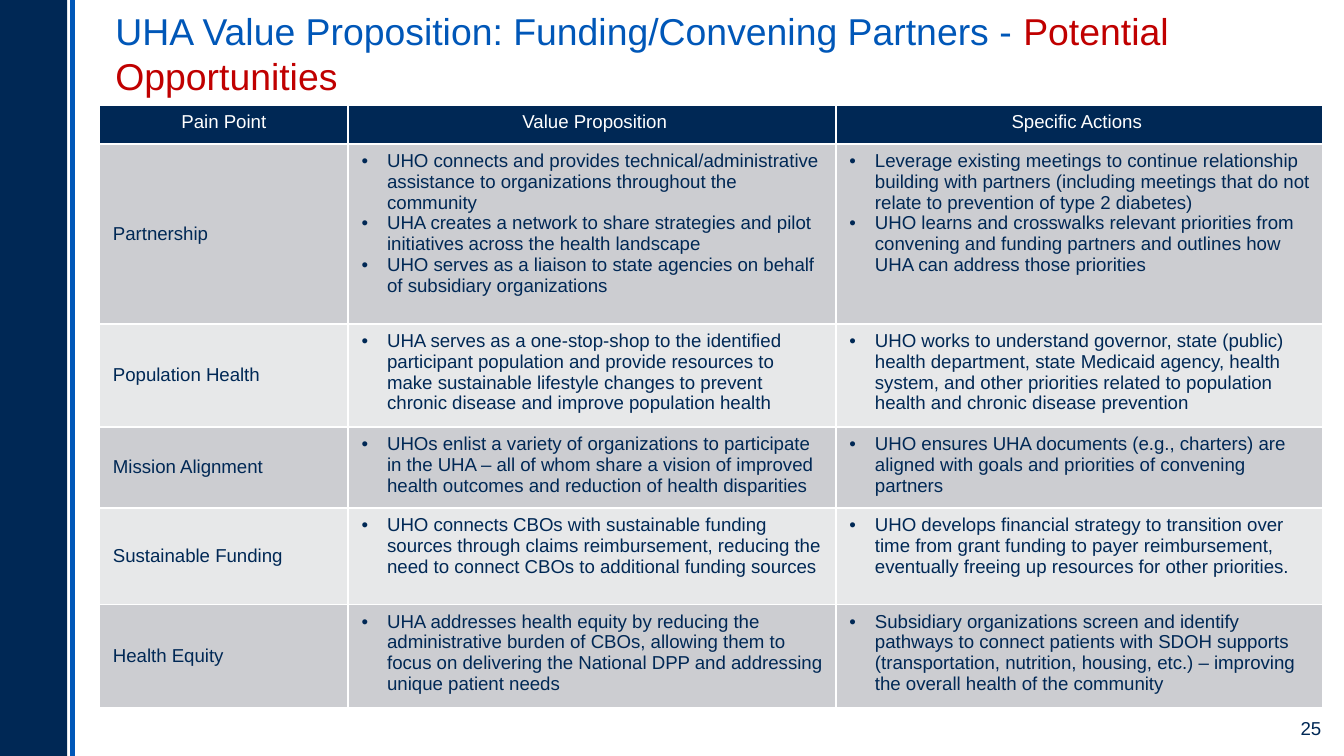
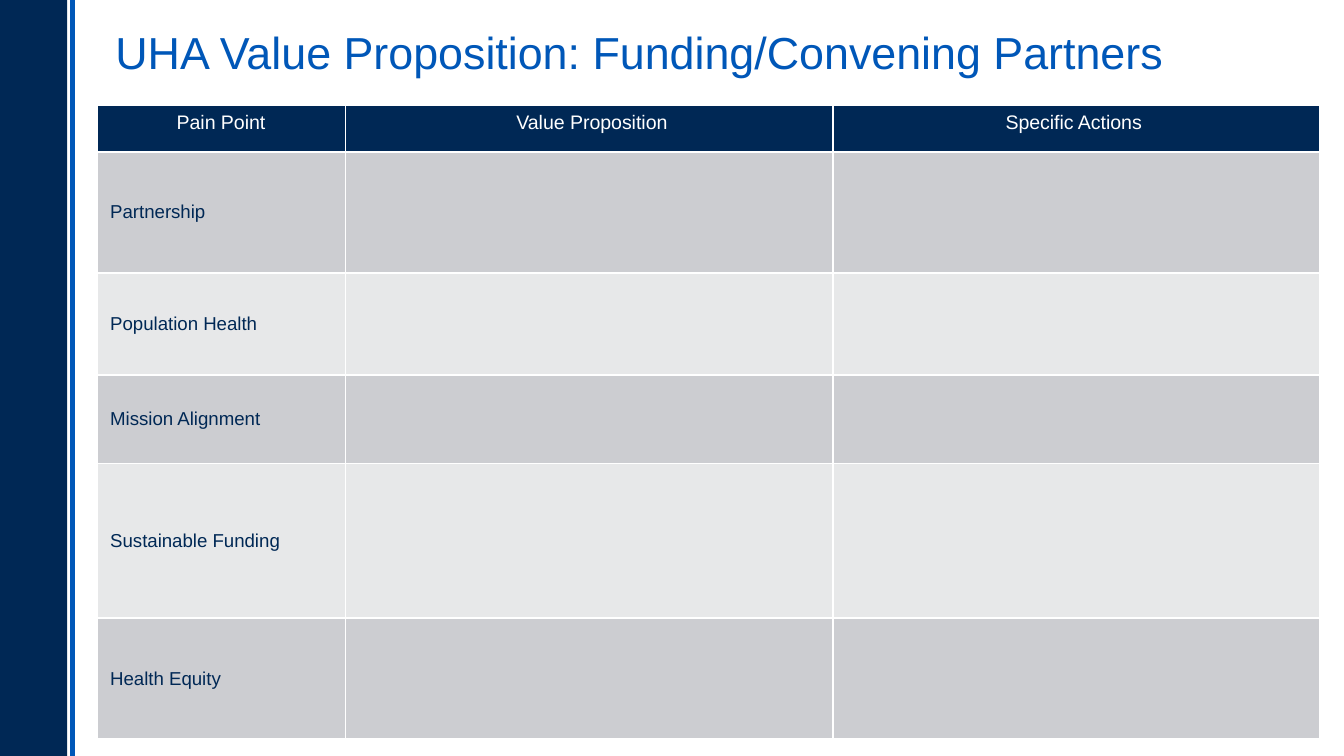
from lxml.etree import SubElement
from pptx import Presentation
from pptx.dml.color import RGBColor
from pptx.enum.shapes import MSO_CONNECTOR, MSO_SHAPE
from pptx.enum.text import MSO_ANCHOR, PP_ALIGN
from pptx.oxml import parse_xml
from pptx.oxml.ns import nsdecls, qn
from pptx.util import Inches, Pt

WIDE = Inches(10)
HIGH = WIDE * 9 // 16
NAVY, BLUE, RED, WHITE = "002855", "0057B8", "C00000", "FFFFFF"
BANDS = ["E7E8E9", "CCCDD1"]
COLS = [1.85, 3.63, 3.62]
TOP = 0.78
HEADS = ["Pain Point", " Value Proposition", "Specific Actions "]
PAINS = ["Partnership", "Population Health", "Mission Alignment",
         "Sustainable Funding", "Health Equity"]
TITLE = "UHA Value Proposition: Funding/Convening Partners"

VALUES = [
    ["UHO connects and provides technical/administrative assistance to "
     "organizations throughout the community",
     "UHA creates a network to share strategies and pilot initiatives across "
     "the health landscape",
     "UHO serves as a liaison to state agencies on behalf of subsidiary "
     "organizations"],
    ["UHA serves as a one-stop-shop to the identified participant population "
     "and provide resources to make sustainable lifestyle changes to prevent "
     "chronic disease and improve population health"],
    ["UHOs enlist a variety of organizations to participate in the UHA – all "
     "of whom share a vision of improved health outcomes and reduction of "
     "health disparities"],
    ["UHO connects CBOs with sustainable funding sources through claims "
     "reimbursement, reducing the need to connect CBOs to additional funding "
     "sources"],
    ["UHA addresses health equity by reducing the administrative burden of "
     "CBOs, allowing them to focus on delivering the National DPP and "
     "addressing unique patient needs"],
]
ACTIONS = [
    ["Leverage existing meetings to continue relationship building with "
     "partners (including meetings that do not relate to prevention of type 2 "
     "diabetes)",
     "UHO learns and crosswalks relevant priorities from convening and "
     "funding partners and outlines how UHA can address those priorities"],
    ["UHO works to understand governor, state (public) health department, "
     "state Medicaid agency, health system, and other priorities related to "
     "population health and chronic disease prevention"],
    ["UHO ensures UHA documents (e.g., charters) are aligned with goals and "
     "priorities of convening partners"],
    ["UHO develops financial strategy to transition over time from grant "
     "funding to payer reimbursement, eventually freeing up resources for "
     "other priorities."],
    ["Subsidiary organizations screen and identify pathways to connect "
     "patients with SDOH supports (transportation, nutrition, housing, etc.) "
     "– improving the overall health of the community"],
]
NONE = [[]] * len(PAINS)

SLIDES = [
    {"title": [(TITLE + " - ", BLUE), ("Potential Opportunities", RED)],
     "size": 20, "box": (9.24, 0.71), "left": 0.74, "head": 10, "page": "25",
     "rows": [0.29, 1.34, 0.64, 0.56, 0.72, 0.76], "tall": 4.63,
     "body": (VALUES, ACTIONS)},
    {"title": [(TITLE, BLUE)],
     "size": 24, "box": (9.08, 0.56), "left": 0.72, "head": 10.5, "page": "",
     "rows": [0.35, 0.9, 0.76, 0.66, 1.15, 0.9], "tall": 4.72,
     "body": (NONE, NONE)},
]


def ink(code):
    """Turn a hex string into a colour."""
    return RGBColor.from_string(code)


def write(frame, paras, size, align=PP_ALIGN.LEFT, bullet=False):
    """Fill a frame; each paragraph is a list of (text, colour) runs."""
    for n, runs in enumerate(paras):
        para = frame.add_paragraph() if n else frame.paragraphs[0]
        para.alignment = align
        if bullet:
            props = para._p.get_or_add_pPr()
            props.set("marL", str(Inches(0.19)))
            props.set("indent", str(-Inches(0.19)))
            SubElement(props, qn("a:buFont")).set("typeface", "Arial")
            SubElement(props, qn("a:buChar")).set("char", "•")
        for text, code in runs:
            run = para.add_run()
            run.text = text
            look = {"name": "Arial", "size": Pt(size), "bold": False}
            for key, val in look.items():
                setattr(run.font, key, val)
            run.font.color.rgb = ink(code)


deck = Presentation()
deck.slide_width, deck.slide_height = WIDE, HIGH

for plan in SLIDES:
    slide = deck.slides.add_slide(deck.slide_layouts[6])
    shapes = slide.shapes

    # Side band and stripe
    mid = Inches(0.54)
    stripe = shapes.add_connector(MSO_CONNECTOR.STRAIGHT, mid, HIGH, mid, 0)
    stripe.line.color.rgb = ink(BLUE)
    stripe.line.width = Pt(2.25)
    SubElement(stripe._element.spPr, qn("a:effectLst"))
    band = shapes.add_shape(MSO_SHAPE.RECTANGLE, 0, 0, Inches(0.5), HIGH)
    band.shadow.inherit = False
    band.fill.solid()
    band.fill.fore_color.rgb = ink(NAVY)
    band.line.fill.background()

    # Title and page number
    width, height = plan["box"]
    boxes = [
        ((0.76, 0.07, width, height), plan["title"], plan["size"],
         PP_ALIGN.LEFT, MSO_ANCHOR.BOTTOM),
        ((9, 5.27, 0.93, 0.3), [(plan["page"], NAVY)], 10,
         PP_ALIGN.RIGHT, MSO_ANCHOR.MIDDLE),
    ]
    for place, runs, size, align, anchor in boxes:
        if runs[0][0]:
            frame = shapes.add_textbox(*map(Inches, place)).text_frame
            frame.word_wrap = True
            frame.vertical_anchor = anchor
            write(frame, [runs], size, align)

    # Table
    rows = plan["rows"]
    place = (plan["left"], TOP, sum(COLS), plan["tall"])
    grid = shapes.add_table(len(rows), len(COLS), *map(Inches, place))
    table = grid.table
    for col, size in zip(table.columns, COLS):
        col.width = Inches(size)
    for row, size in zip(table.rows, rows):
        row.height = Inches(size)
    grid.height = Inches(plan["tall"])

    for r in range(len(rows)):
        for c in range(len(COLS)):
            cell = table.cell(r, c)
            cell.fill.solid()
            cell.fill.fore_color.rgb = ink(BANDS[r % 2] if r else NAVY)
            props = cell._tc.get_or_add_tcPr()
            for n, side in enumerate("LRTB"):
                props.insert(n, parse_xml(
                    f'<a:ln{side} {nsdecls("a")} w="{Pt(1)}"><a:solidFill>'
                    f'<a:srgbClr val="{WHITE}"/></a:solidFill></a:ln{side}>'))
            if r == 0:
                write(cell.text_frame, [[(HEADS[c], WHITE)]], plan["head"],
                      PP_ALIGN.CENTER)
            elif c == 0:
                cell.vertical_anchor = MSO_ANCHOR.MIDDLE
                write(cell.text_frame, [[(PAINS[r - 1], NAVY)]], 10)
            else:
                items = plan["body"][c - 1][r - 1]
                write(cell.text_frame, [[(item, NAVY)] for item in items], 10,
                      bullet=True)

deck.save("out.pptx")
